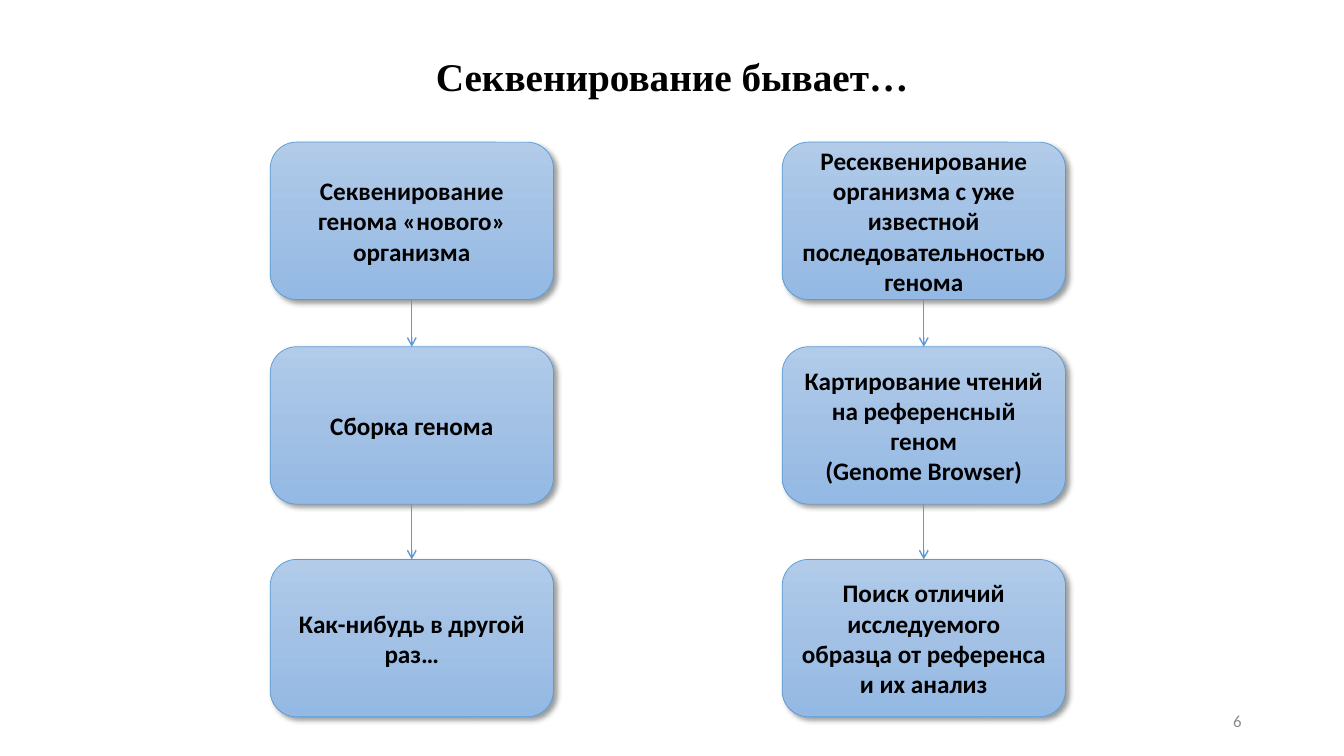
import copy

import pptx
import pptx.dml.color
import pptx.enum.shapes
import pptx.enum.text
import pptx.oxml
import pptx.oxml.ns
import pptx.util

Pt = pptx.util.Pt
ALIGN = pptx.enum.text.PP_ALIGN
ANCHOR = pptx.enum.text.MSO_ANCHOR

COLORS = {
    "text": "000000",
    "number": "8C8C8C",
    "outline": "5B9BD5",
    "box_top": "B1CBE9",
    "box_middle": "A3C1E5",
    "box_bottom": "93B9E4",
    "shadow": "000000",
}
BOX_WIDTH, BOX_HEIGHT = 202.3, 112.4
BOX_TOPS = (101.5, 247.7, 399.6)
BRANCHES = (
    (193, (
        "Секвенирование генома «нового» организма",
        "Сборка генома",
        "Как-нибудь в другой раз…",
    )),
    (558.7, (
        "Ресеквенирование организма с уже известной последовательностью генома",
        "Картирование чтений на референсный геном\n(Genome Browser)",
        "Поиск отличий исследуемого образца от референса и их анализ",
    )),
)


def rgb(name):
    return pptx.dml.color.RGBColor.from_string(COLORS[name])


def write_text(shape, text, size=18, font="Calibri", color="text", bold=True,
               align=ALIGN.CENTER, anchor=ANCHOR.MIDDLE):
    frame = shape.text_frame
    frame.word_wrap = True
    frame.vertical_anchor = anchor
    frame.text = text
    for paragraph in frame.paragraphs:
        paragraph.alignment = align
        paragraph.font.size = Pt(size)
        paragraph.font.name = font
        paragraph.font.bold = bold
        paragraph.font.color.rgb = rgb(color)


def add_label(slide, text, left, top, width, height, **text_format):
    shape = slide.shapes.add_textbox(Pt(left), Pt(top), Pt(width), Pt(height))
    write_text(shape, text, **text_format)


def fill_gradient(shape):
    shape.fill.gradient()
    shape.fill.gradient_angle = 270
    stop_list = shape.fill._xPr.find(".//" + pptx.oxml.ns.qn("a:gsLst"))
    stop_list.insert(1, copy.deepcopy(stop_list[0]))
    names = ("box_top", "box_middle", "box_bottom")
    for index, (stop, name) in enumerate(zip(shape.fill.gradient_stops, names)):
        stop.position = index / 2
        stop.color.rgb = rgb(name)


def add_shadow(shape):
    shape.shadow.inherit = False
    effects = shape._element.spPr.find(pptx.oxml.ns.qn("a:effectLst"))
    effects.append(pptx.oxml.parse_xml(
        f'<a:outerShdw {pptx.oxml.ns.nsdecls("a")} blurRad="{Pt(4)}" '
        f'dist="{Pt(3)}" dir="2700000" algn="tl" rotWithShape="0">'
        f'<a:srgbClr val="{COLORS["shadow"]}"><a:alpha val="40000"/></a:srgbClr>'
        '</a:outerShdw>'))


def add_step(slide, text, left, top):
    shape = slide.shapes.add_shape(
        pptx.enum.shapes.MSO_SHAPE.ROUNDED_RECTANGLE,
        Pt(left), Pt(top), Pt(BOX_WIDTH), Pt(BOX_HEIGHT))
    fill_gradient(shape)
    shape.line.color.rgb = rgb("outline")
    shape.line.width = Pt(0.5)
    add_shadow(shape)
    write_text(shape, text)
    return shape


def add_arrow(slide, upper, lower):
    arrow = slide.shapes.add_connector(
        pptx.enum.shapes.MSO_CONNECTOR.STRAIGHT, 0, 0, 0, 0)
    arrow.begin_connect(upper, 2)
    arrow.end_connect(lower, 0)
    arrow.line.color.rgb = rgb("outline")
    arrow.line.width = Pt(1)
    namespace = pptx.oxml.ns.nsdecls("a")
    arrow.line._get_or_add_ln().append(
        pptx.oxml.parse_xml(f'<a:tailEnd {namespace} type="arrow"/>'))
    arrow._element.spPr.append(
        pptx.oxml.parse_xml(f'<a:effectLst {namespace}/>'))


def main():
    presentation = pptx.Presentation()
    presentation.slide_width = Pt(960)
    presentation.slide_height = Pt(540)
    slide = presentation.slides.add_slide(presentation.slide_layouts[6])

    add_label(slide, "Секвенирование бывает…", 0, 34, 960, 41,
              size=28, font="Times New Roman", anchor=ANCHOR.TOP)
    for left, texts in BRANCHES:
        steps = [add_step(slide, text, left, top)
                 for text, top in zip(texts, BOX_TOPS)]
        for upper, lower in zip(steps, steps[1:]):
            add_arrow(slide, upper, lower)
    add_label(slide, "6", 678, 500.5, 216, 28.8,
              size=12, color="number", bold=False, align=ALIGN.RIGHT)

    presentation.save("out.pptx")


if __name__ == "__main__":
    main()
